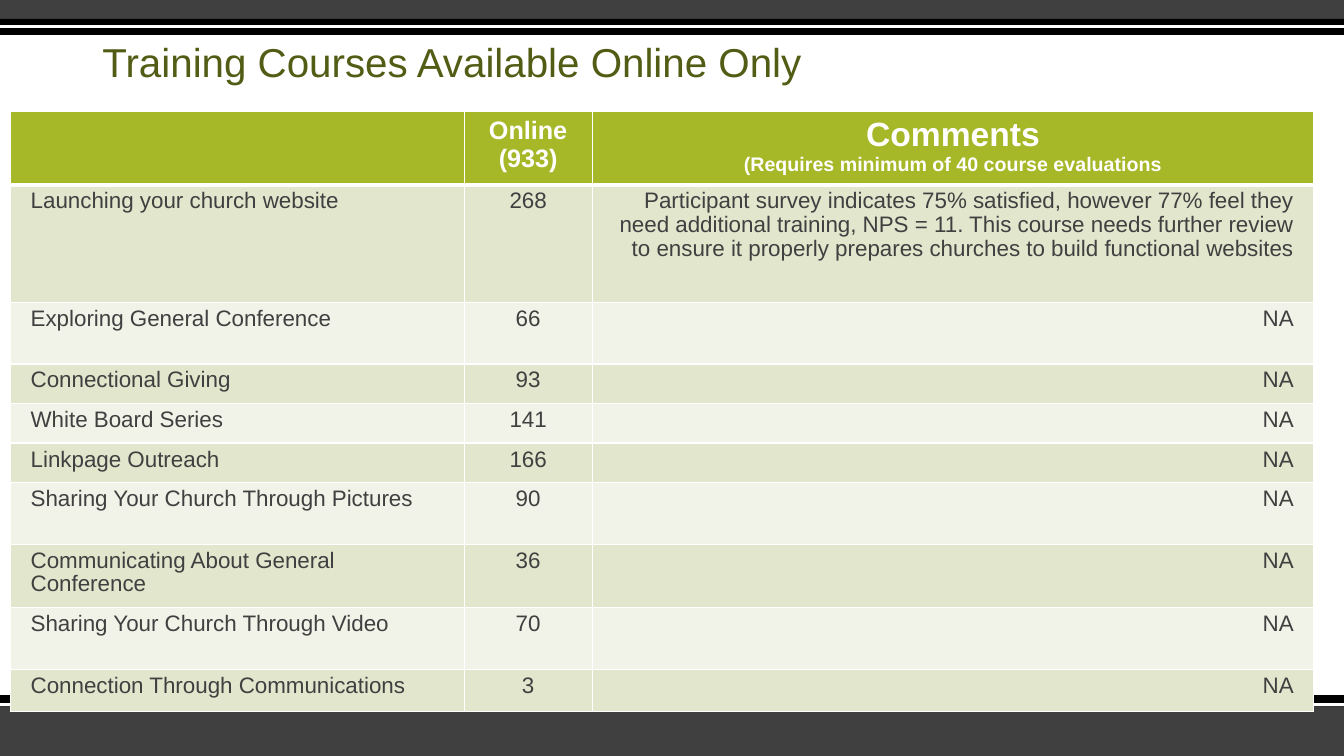
from lxml.etree import SubElement
from pptx import Presentation
from pptx.dml.color import RGBColor
from pptx.enum.shapes import MSO_SHAPE
from pptx.enum.text import MSO_ANCHOR, PP_ALIGN
from pptx.oxml.ns import qn
from pptx.util import Pt

WIDTH, HEIGHT = 960, 540
COLUMN_WIDTHS = [324, 91.5, 515.5]
ROW_HEIGHTS = [52.5, 84, 44, 28.25, 28.25, 28.25, 44, 45.5, 44, 30]
ALIGNMENTS = [PP_ALIGN.LEFT, PP_ALIGN.CENTER, PP_ALIGN.RIGHT]
WEBSITE_COMMENT = (
    "Participant survey indicates 75% satisfied, however 77% feel they need "
    "additional training, NPS = 11. This course needs further review to ensure "
    "it properly prepares churches to build functional websites"
)
COURSES = [
    ("Launching your church website", "268", WEBSITE_COMMENT),
    ("Exploring General Conference", "66", "NA"),
    ("Connectional Giving", "93", "NA"),
    ("White Board Series", "141", "NA"),
    ("Linkpage Outreach", "166", "NA"),
    ("Sharing Your Church Through Pictures", "90", "NA"),
    ("Communicating About General Conference", "36", "NA"),
    ("Sharing Your Church Through Video", "70", "NA"),
    ("Connection Through Communications", "3", "NA"),
]


def color(value):
    return RGBColor.from_string(value)


def write(paragraph, text, size=16, fill="404040", bold=False,
          align=PP_ALIGN.LEFT, spacing=1.0):
    paragraph.text = text
    paragraph.alignment = align
    paragraph.line_spacing = spacing
    paragraph.space_before = Pt(0)
    font = paragraph.font
    font.name = "Arial"
    font.size = Pt(size)
    font.bold = bold
    font.color.rgb = color(fill)


def add_bands(slide, top, bands):
    for offset, height, fill in bands:
        shape = slide.shapes.add_shape(
            MSO_SHAPE.RECTANGLE, 0, Pt(top + offset), Pt(WIDTH), Pt(height))
        shape.shadow.inherit = False
        shape.fill.solid()
        shape.fill.fore_color.rgb = color(fill)
        shape.line.fill.background()


def add_title(slide, left, top, width, height):
    title = slide.shapes.title
    title.left, title.top = Pt(left), Pt(top)
    title.width, title.height = Pt(width), Pt(height)
    frame = title.text_frame
    frame.word_wrap = True
    frame.vertical_anchor = MSO_ANCHOR.BOTTOM
    write(frame.paragraphs[0], "Training Courses Available Online Only",
          size=28.8, fill="535C14", spacing=0.9)


def style_cell(cell, fill, bottom_width):
    cell.margin_left = cell.margin_right = Pt(14.4)
    cell.margin_top = cell.margin_bottom = Pt(3.6)
    properties = cell._tc.get_or_add_tcPr()
    for side, width in (("L", 1), ("R", 1), ("T", 1), ("B", bottom_width)):
        border = SubElement(properties, qn(f"a:ln{side}"), w=str(Pt(width)))
        solid = SubElement(border, qn("a:solidFill"))
        SubElement(solid, qn("a:srgbClr"), val="FFFFFF")
    cell.fill.solid()
    cell.fill.fore_color.rgb = color(fill)


def write_header(cell, lines):
    frame = cell.text_frame
    for index, (text, size) in enumerate(lines):
        paragraph = frame.add_paragraph() if index else frame.paragraphs[0]
        write(paragraph, text, size=size, fill="FFFFFF", bold=True,
              align=PP_ALIGN.CENTER)


def add_course_table(slide, left, top):
    table = slide.shapes.add_table(
        len(ROW_HEIGHTS), len(COLUMN_WIDTHS), Pt(left), Pt(top),
        Pt(sum(COLUMN_WIDTHS)), Pt(sum(ROW_HEIGHTS))).table
    for column, width in zip(table.columns, COLUMN_WIDTHS):
        column.width = Pt(width)
    for index, (row, height) in enumerate(zip(table.rows, ROW_HEIGHTS)):
        row.height = Pt(height)
        fill = ("E1E6CD" if index % 2 else "F1F3E8") if index else "A6B727"
        for cell in row.cells:
            style_cell(cell, fill, 1 if index else 3)
    write_header(table.cell(0, 1), [("Online", 18), ("(933)", 18)])
    write_header(table.cell(0, 2), [
        ("Comments", 24), ("(Requires minimum of 40 course evaluations", 14)])
    for row_index, course in enumerate(COURSES, start=1):
        for column_index, text in enumerate(course):
            paragraph = table.cell(row_index, column_index).text_frame.paragraphs[0]
            write(paragraph, text, align=ALIGNMENTS[column_index], spacing=0.95)


def main():
    presentation = Presentation()
    presentation.slide_width, presentation.slide_height = Pt(WIDTH), Pt(HEIGHT)
    slide = presentation.slides.add_slide(presentation.slide_layouts[5])
    add_bands(slide, 496.5, [
        (7.5, 36, "404040"), (0, 8, "000000"), (5.75, 2, "FFFFFF")])
    add_bands(slide, 0, [
        (0, 13.5, "404040"), (13.5, 11.5, "000000"), (18, 2, "FFFFFF")])
    add_title(slide, 66, 28.5, 828, 37)
    add_course_table(slide, 7.5, 79.5)
    presentation.save("out.pptx")


if __name__ == "__main__":
    main()
